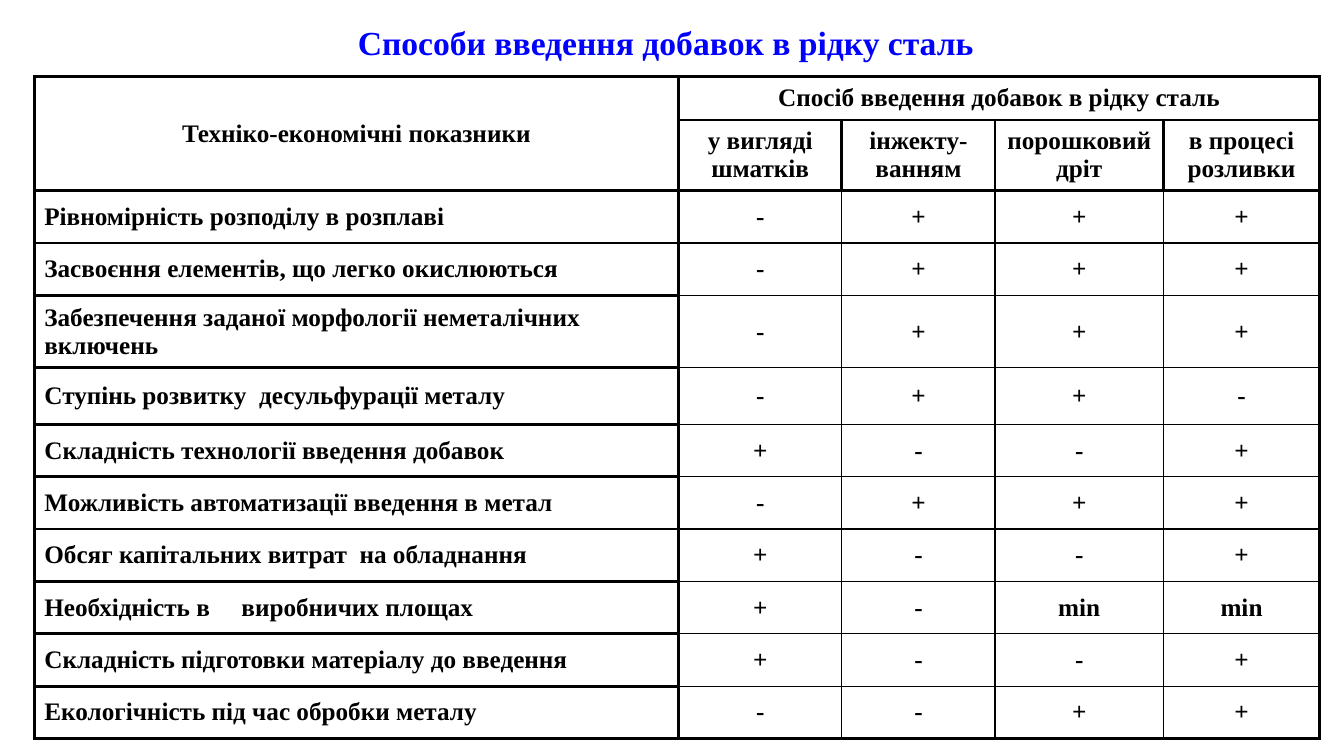
from lxml.etree import SubElement
from pptx import Presentation
from pptx.dml.color import RGBColor
from pptx.enum.text import MSO_ANCHOR, MSO_AUTO_SIZE, PP_ALIGN
from pptx.oxml.ns import qn
from pptx.util import Inches, Pt

COLORS = {"title": "0000FF", "text": "000000", "border": "000000"}
THICK, THIN = 2.25, 1

COLUMN_WIDTHS = [6.39, 1.62, 1.52, 1.67, 1.55]
ROW_HEIGHTS = [0.43, 0.62, 0.52, 0.52, 0.72, 0.56] + [0.52] * 6
METHODS = ["у вигляді шматків", "інжекту-\nванням", "порошковий дріт", "в процесі розливки"]
INDICATORS = [
    ("Рівномірність розподілу в розплаві", "- + + +"),
    ("Засвоєння елементів, що легко окислюються", "- + + +"),
    ("Забезпечення заданої морфології неметалічних\vвключень", "- + + +"),
    ("Ступінь розвитку  десульфурації металу", "- + + -"),
    ("Складність технології введення добавок", "+ - - +"),
    ("Можливість автоматизації введення в метал", "- + + +"),
    ("Обсяг капітальних витрат  на обладнання", "+ - - +"),
    ("Необхідність в     виробничих площах", "+ - min min"),
    ("Складність підготовки матеріалу до введення", "+ - - +"),
    ("Екологічність під час обробки металу", "- - + +"),
]


class SlideBuilder:
    font = "Times New Roman"

    def __init__(self, slide):
        self.slide = slide

    def set_text(self, text_frame, text, size, color, alignment):
        text_frame.text = text
        for paragraph in text_frame.paragraphs:
            paragraph.alignment = alignment
            for run in paragraph.runs:
                run.font.name = self.font
                run.font.size = Pt(size)
                run.font.bold = True
                run.font.color.rgb = RGBColor.from_string(COLORS[color])

    def add_title(self, text, left, top, width, height, indent):
        shape = self.slide.shapes.add_textbox(
            Inches(left), Inches(top), Inches(width), Inches(height))
        text_frame = shape.text_frame
        text_frame.word_wrap = False
        text_frame.auto_size = MSO_AUTO_SIZE.SHAPE_TO_FIT_TEXT
        self.set_text(text_frame, text, 24, "title", PP_ALIGN.JUSTIFY)
        properties = text_frame.paragraphs[0]._p.get_or_add_pPr()
        properties.set("indent", str(Inches(indent)))

    def add_table(self, rows, left, top):
        shape = self.slide.shapes.add_table(
            len(rows), len(COLUMN_WIDTHS), Inches(left), Inches(top),
            Inches(sum(COLUMN_WIDTHS)), Inches(sum(ROW_HEIGHTS)))
        table = shape.table
        table.first_row = table.horz_banding = False
        for column, width in zip(table.columns, COLUMN_WIDTHS):
            column.width = Inches(width)
        for row, height in zip(table.rows, ROW_HEIGHTS):
            row.height = Inches(height)
        for row, values in enumerate(rows):
            for column, value in enumerate(values):
                cell = table.cell(row, column)
                centered = row < 2 or column > 0
                alignment = PP_ALIGN.CENTER if centered else PP_ALIGN.LEFT
                self.set_text(cell.text_frame, value, 18, "text", alignment)
                cell.vertical_anchor = MSO_ANCHOR.MIDDLE
                self.add_borders(cell, row, column, len(rows) - 1, len(values) - 1)
                cell.fill.background()
        table.cell(0, 0).merge(table.cell(1, 0))
        table.cell(0, 1).merge(table.cell(0, 4))

    def add_borders(self, cell, row, column, last_row, last_column):
        heading = row < 2 or column == 0
        thick_sides = {
            "L": heading or column == 1,
            "R": heading or column == last_column,
            "T": heading or row == 2,
            "B": heading or row == last_row,
        }
        properties = cell._tc.get_or_add_tcPr()
        for side, thick in thick_sides.items():
            width = Pt(THICK if thick else THIN)
            line = SubElement(properties, qn(f"a:ln{side}"), w=str(width))
            fill = SubElement(line, qn("a:solidFill"))
            SubElement(fill, qn("a:srgbClr"), val=COLORS["border"])


def main():
    presentation = Presentation()
    presentation.slide_width = Inches(13.33)
    presentation.slide_height = Inches(7.5)
    slide = presentation.slides.add_slide(presentation.slide_layouts[6])
    builder = SlideBuilder(slide)
    builder.add_title("Способи введення добавок в рідку сталь", 2.96, 0.17, 6.81, 0.5, 0.49)
    rows = [
        ["Техніко-економічні показники", "Спосіб введення добавок в рідку сталь", "", "", ""],
        ["", *METHODS],
    ]
    rows += [[indicator, *marks.split()] for indicator, marks in INDICATORS]
    builder.add_table(rows, 0.34, 0.76)
    presentation.save("out.pptx")


if __name__ == "__main__":
    main()
